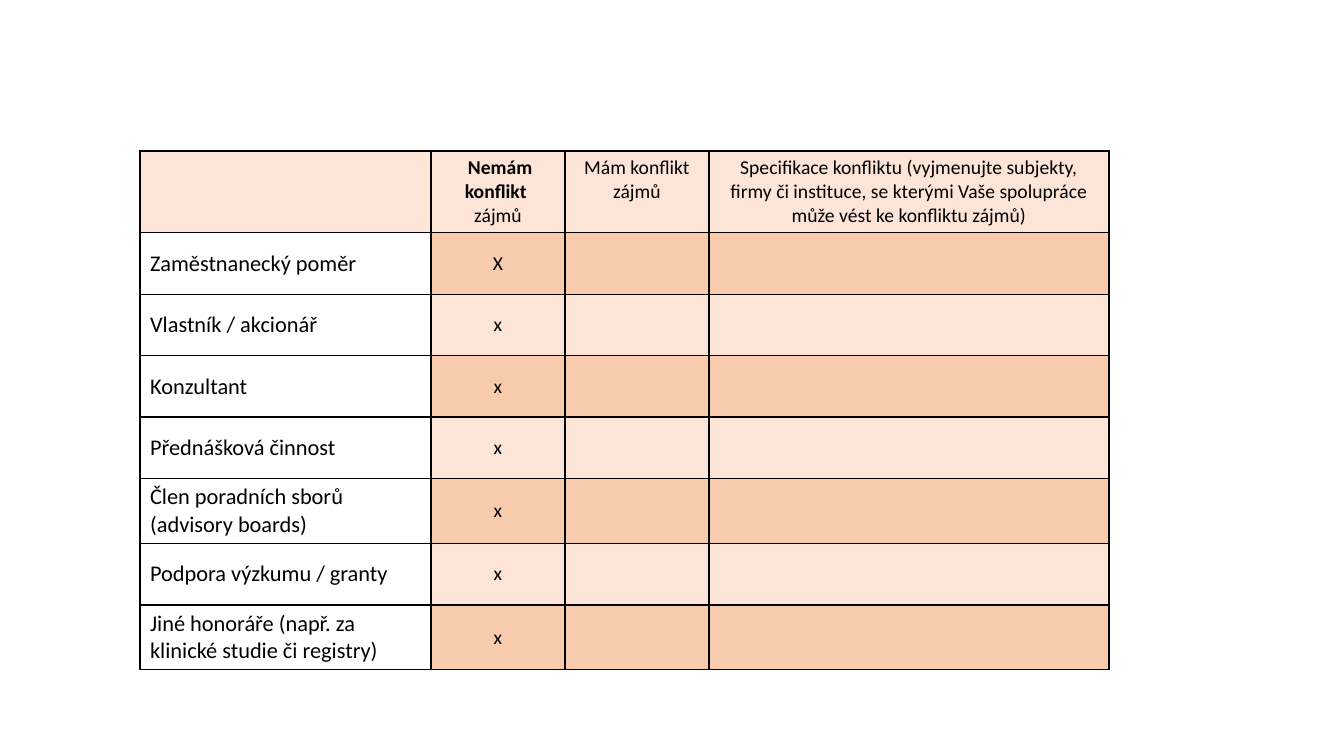
from lxml import etree
from pptx import Presentation
from pptx import util as u
from pptx.dml.color import RGBColor
from pptx.enum import text
from pptx.oxml.ns import qn

SCALE = 914400 / 100.8
BLACK = RGBColor(0x00, 0x00, 0x00)
WHITE = RGBColor(0xFF, 0xFF, 0xFF)
PALE = RGBColor(0xFC, 0xE4, 0xD6)
PEACH = RGBColor(0xF8, 0xCB, 0xAD)

WIDTHS = [291, 134, 144, 400]
HEADS = [
    [],
    [[(" ", False), ("Nemám konflikt ", True)], [("zájmů", False)]],
    [[("Mám konflikt zájmů", False)]],
    [[("Specifikace konfliktu (vyjmenujte subjekty, firmy či instituce, "
       "se kterými Vaše spolupráce může vést ke konfliktu zájmů)", False)]],
]
ROWS = [
    ("Zaměstnanecký poměr", "X"),
    ("Vlastník / akcionář", "x"),
    ("Konzultant", "x"),
    ("Přednášková činnost", "x"),
    ("Člen poradních sborů (advisory boards)", "x"),
    ("Podpora výzkumu / granty", "x"),
    ("Jiné honoráře (např. za klinické studie či registry)", "x"),
]


def px(n):
    return u.Emu(round(n * SCALE))


def frame(cell, fill):
    props = cell._tc.get_or_add_tcPr()
    for side in ("lnL", "lnR", "lnT", "lnB"):
        line = etree.SubElement(props, qn("a:" + side), w=str(u.Pt(1)))
        solid = etree.SubElement(line, qn("a:solidFill"))
        etree.SubElement(solid, qn("a:srgbClr"), val=str(BLACK))
    cell.fill.solid()
    cell.fill.fore_color.rgb = fill


def write(cell, paras, size, align):
    for i, runs in enumerate(paras):
        para = cell.text_frame.paragraphs[0] if i == 0 else cell.text_frame.add_paragraph()
        para.alignment = align
        for words, bold in runs:
            run = para.add_run()
            run.text = words
            style = {"name": "Calibri", "size": u.Pt(size), "bold": bold}
            for key, value in style.items():
                setattr(run.font, key, value)
            run.font.color.rgb = BLACK


def draw_table(slide, left, top, width, height):
    shape = slide.shapes.add_table(len(ROWS) + 1, len(WIDTHS),
                                   px(left), px(top), px(width), px(height))
    table = shape.table
    flags = {"first_row": False, "horz_banding": False}
    for key, value in flags.items():
        setattr(table, key, value)
    for col, part in zip(table.columns, WIDTHS):
        col.width = px(width * part / sum(WIDTHS))

    center, start = text.PP_ALIGN.CENTER, text.PP_ALIGN.LEFT
    for c, paras in enumerate(HEADS):
        cell = table.cell(0, c)
        frame(cell, PALE)
        write(cell, paras, 14, center)

    for r, (label, mark) in enumerate(ROWS, 1):
        band = PEACH if r % 2 else PALE
        for c in range(len(WIDTHS)):
            cell = table.cell(r, c)
            frame(cell, band if c else WHITE)
            cell.vertical_anchor = text.MSO_ANCHOR.MIDDLE
        write(table.cell(r, 0), [[(label, False)]], 16, start)
        write(table.cell(r, 1), [[(mark, False)]], 14, center)


def main():
    deck = Presentation()
    deck.slide_width, deck.slide_height = px(1344), px(756)
    slide = deck.slides.add_slide(deck.slide_layouts[6])
    draw_table(slide, 140, 151, sum(WIDTHS), 492)
    deck.save("out.pptx")


if __name__ == "__main__":
    main()
